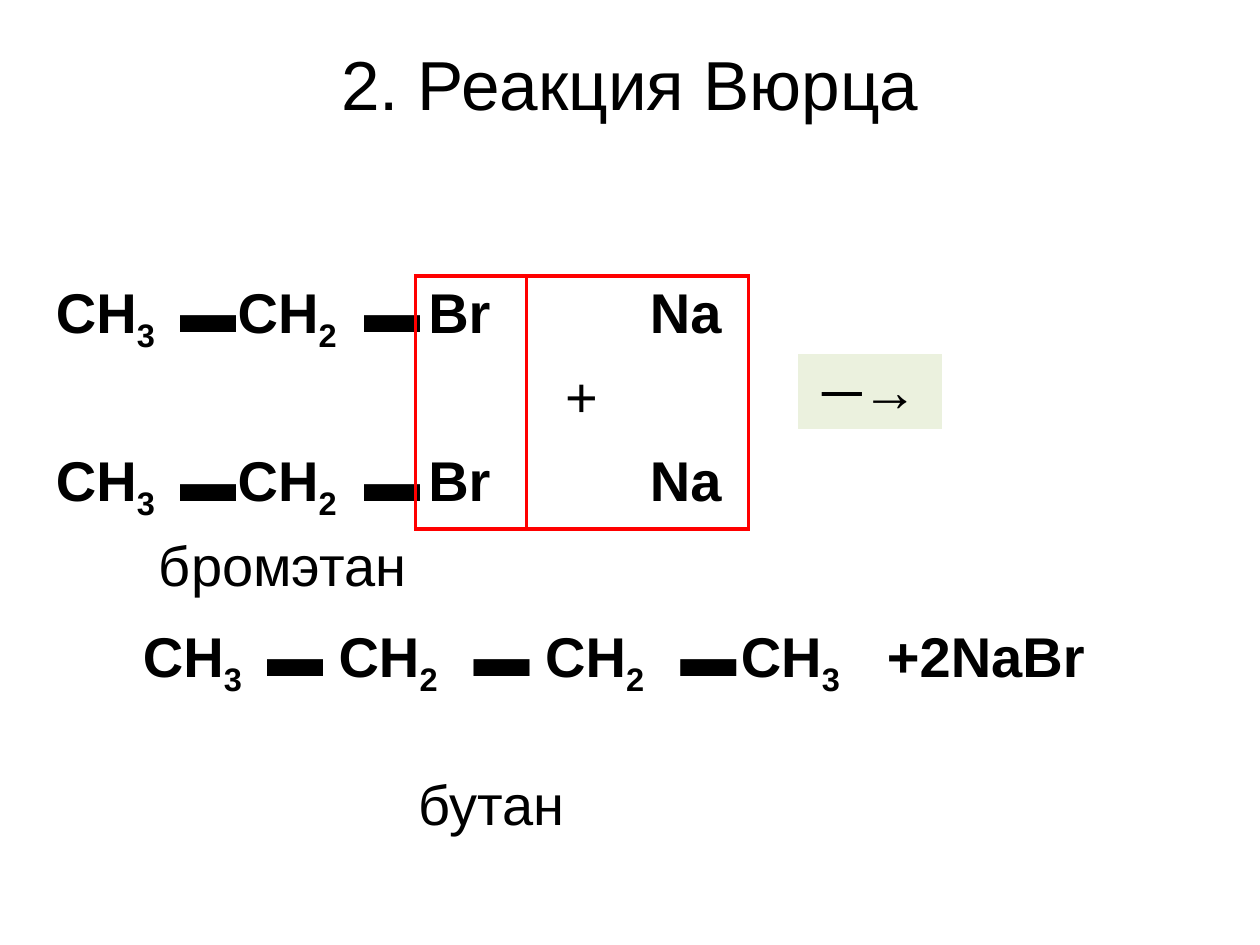
from lxml.etree import SubElement
from pptx import Presentation
from pptx.dml.color import RGBColor
from pptx.enum.text import MSO_ANCHOR as Anchor, PP_ALIGN as Align
from pptx.oxml.ns import qn
from pptx.util import Inches, Pt

COLORS = {"text": "000000", "box": "FF0000", "arrow": "EBF1DE"}
UNIT = Inches(0.1)
GRID_COLUMNS, GRID_ROWS = 100, 75
PLAIN_STYLE = "{2D5ABB26-0587-4C30-8999-92F81FD0307C}"
BOND = "▬"


def grid(units):
    return round(units * UNIT)


def add_run(paragraph, text, size=32, bold=True, font="Arial"):
    run = paragraph.add_run()
    run.text = text
    run.font.name = font
    run.font.size = Pt(size)
    run.font.bold = bold
    run.font.color.rgb = RGBColor.from_string(COLORS["text"])
    return run


def add_title(slide, text):
    title = slide.shapes.title
    title.left, title.top, title.width, title.height = map(grid, (5, 3, 90, 7.2))
    title.text_frame.vertical_anchor = Anchor.MIDDLE
    paragraph = title.text_frame.paragraphs[0]
    paragraph.alignment = Align.CENTER
    add_run(paragraph, text, 39.6, False)


def add_grid_table(slide, left, top, columns, rows):
    frame = slide.shapes.add_table(len(rows), len(columns), grid(left), grid(top),
                                   grid(sum(columns)), grid(sum(rows)))
    table = frame.table
    table.first_row = table.horz_banding = False
    table._tbl.tblPr.find(qn("a:tableStyleId")).text = PLAIN_STYLE
    for column, width in zip(table.columns, columns):
        column.width = grid(width)
    for row, height in zip(table.rows, rows):
        row.height = grid(height)
    return table


def write(cell, text, align=Align.LEFT, bold=True, font="Arial"):
    paragraph = cell.text_frame.paragraphs[0]
    paragraph.alignment = align
    add_run(paragraph, text, bold=bold, font=font)
    return paragraph


def write_group(cell, hydrogens, align):
    paragraph = write(cell, "СН", align)
    subscript = add_run(paragraph, hydrogens)
    subscript.font._element.set("baseline", "-25000")


def write_chain(table, row, groups, bond_aligns):
    for index, (hydrogens, align) in enumerate(groups):
        write_group(table.cell(row, 2 * index), hydrogens, align)
    for index, align in enumerate(bond_aligns):
        write(table.cell(row, 2 * index + 1), BOND, align, font="Times New Roman")


def write_name(table, row, last_column, text):
    cell = table.cell(row, 0)
    cell.merge(table.cell(row, last_column))
    write(cell, text, Align.CENTER, False)


def add_border(cell, side):
    line = SubElement(cell._tc.get_or_add_tcPr(), qn(f"a:ln{side}"), w=str(Pt(2.25)))
    fill = SubElement(line, qn("a:solidFill"))
    SubElement(fill, qn("a:srgbClr"), val=COLORS["box"])


def outline_cells(table, top, left, bottom, right):
    rows, columns = range(top, bottom + 1), range(left, right + 1)
    edges = {
        "L": [(row, column) for row in rows for column in (left, right + 1)],
        "R": [(row, column) for row in rows for column in (left - 1, right)],
        "T": [(row, column) for row in (top, bottom + 1) for column in columns],
        "B": [(bottom, column) for column in columns],
    }
    for side, cells in edges.items():
        for row, column in cells:
            add_border(table.cell(row, column), side)


def add_reagents(slide):
    table = add_grid_table(slide, 3.1, 21.9, [10.2, 4.4, 10.2, 5.1] + [8.8] * 4,
                           [6.7] * 3 + [5.5])
    for row in (0, 2):
        write_chain(table, row, [("3", Align.RIGHT), ("2", Align.CENTER)],
                    [Align.LEFT] * 2)
        write(table.cell(row, 4), "Br")
        write(table.cell(row, 6), "Na")
    write(table.cell(1, 5), "+", Align.CENTER, False)
    write_name(table, 3, 4, "бромэтан")
    outline_cells(table, 0, 4, 2, 6)


def add_reaction_arrow(slide):
    cell = add_grid_table(slide, 63.3, 28.1, [11.5], [5.9]).cell(0, 0)
    write(cell, "─→", Align.CENTER)
    cell.fill.solid()
    cell.fill.fore_color.rgb = RGBColor.from_string(COLORS["arrow"])


def add_products(slide):
    table = add_grid_table(slide, 8.6, 49.2, [11.6, 4.8] * 3 + [11.6] + [7.6] * 3,
                           [11.8, 5.5])
    write_chain(table, 0, [("3", Align.RIGHT), ("2", Align.CENTER),
                           ("2", Align.CENTER), ("3", Align.LEFT)],
                [Align.LEFT, Align.CENTER, Align.LEFT])
    salt = table.cell(0, 7)
    salt.merge(table.cell(0, 9))
    write(salt, "+2NaBr")
    write_name(table, 1, 6, "бутан")


def main():
    """Build the Wurtz reaction slide."""
    presentation = Presentation()
    presentation.slide_width = grid(GRID_COLUMNS)
    presentation.slide_height = grid(GRID_ROWS)
    slide = presentation.slides.add_slide(presentation.slide_layouts[5])
    add_title(slide, "2. Реакция Вюрца")
    add_products(slide)
    add_reaction_arrow(slide)
    add_reagents(slide)
    presentation.save("out.pptx")


if __name__ == "__main__":
    main()
